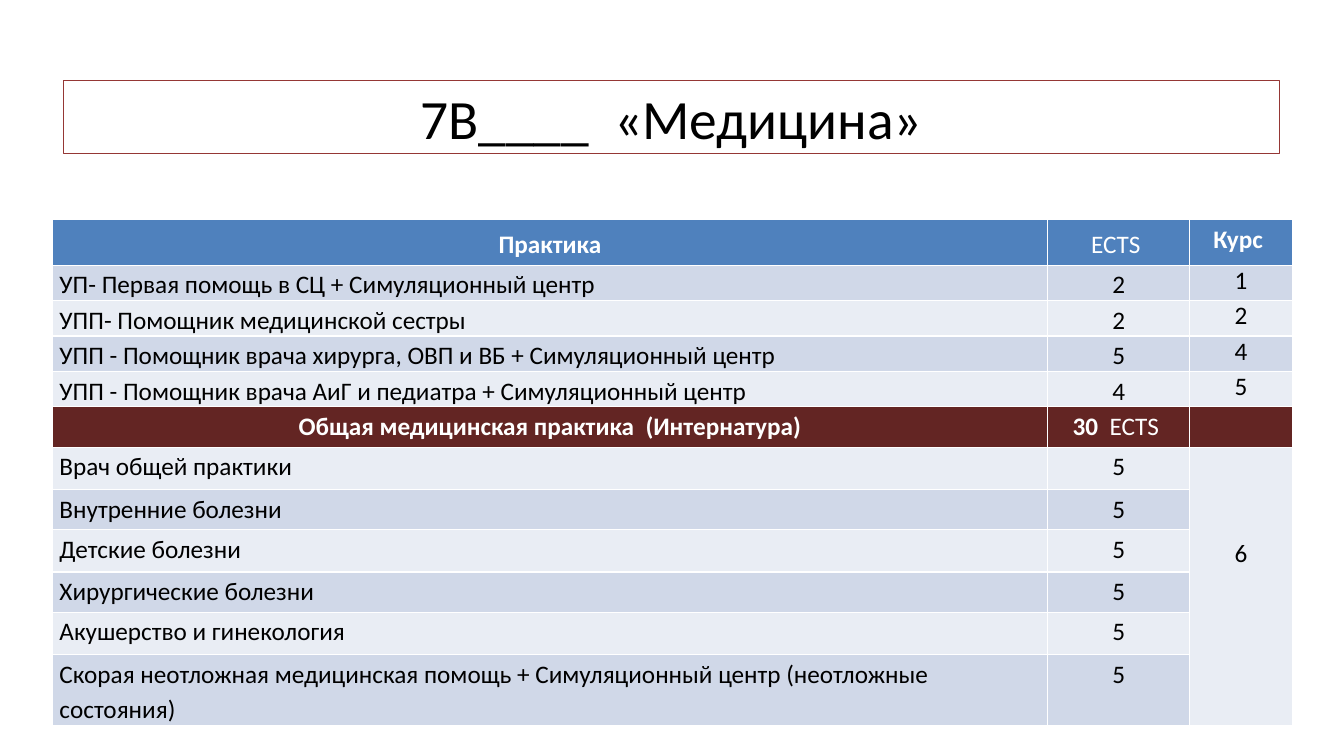
from dataclasses import dataclass
from typing import Optional

from pptx import Presentation
from pptx.dml.color import RGBColor
from pptx.enum.text import MSO_ANCHOR, PP_ALIGN
from pptx.table import Table, _Cell
from pptx.text.text import TextFrame
from pptx.util import Inches, Pt


@dataclass(frozen=True)
class Theme:
    font: str = "Calibri"
    title_size: float = 39.6
    table_size: float = 18
    black: RGBColor = RGBColor(0x00, 0x00, 0x00)
    white: RGBColor = RGBColor(0xFF, 0xFF, 0xFF)
    title_border: RGBColor = RGBColor(0x95, 0x37, 0x35)
    header: RGBColor = RGBColor(0x4F, 0x81, 0xBD)
    section: RGBColor = RGBColor(0x63, 0x25, 0x23)
    odd_row: RGBColor = RGBColor(0xD0, 0xD8, 0xE8)
    even_row: RGBColor = RGBColor(0xE9, 0xED, 0xF4)


@dataclass(frozen=True)
class Span:
    text: str
    bold: bool = False


@dataclass(frozen=True)
class Practice:
    name: Span
    credits: tuple[Span, ...]
    course: Optional[Span] = None
    height: float = 0.4
    band: Optional[RGBColor] = None


THEME = Theme()
HEADER_ROW = 0
INTERNSHIP_START = 6
INTERNSHIP_COURSE_DROP = 0.91
COLUMN_WIDTHS = (9.87, 1.41, 1.02)


def course_practice(name: str, credits: str, course: str) -> Practice:
    return Practice(Span(name), (Span(credits),), Span(course), height=0.34)


def internship(name: str, height: float, course: Optional[str] = None) -> Practice:
    return Practice(Span(name), (Span("5"),), Span(course) if course else None, height)


PRACTICES = (
    Practice(Span("Практика", True), (Span("ECTS "),), Span("Курс ", True), 0.42, THEME.header),
    course_practice("УП- Первая помощь в СЦ + Симуляционный центр", "2", "1"),
    course_practice("УПП- Помощник медицинской сестры", "2", "2"),
    course_practice("УПП - Помощник врача хирурга, ОВП и ВБ + Симуляционный центр", "5", "4"),
    course_practice("УПП - Помощник врача АиГ и педиатра + Симуляционный центр", "4", "5"),
    Practice(
        Span("Общая медицинская практика  (Интернатура)", True),
        (Span("30  ", True), Span("ECTS ")),
        band=THEME.section,
    ),
    internship("Врач общей практики", 0.42, "6"),
    internship("Внутренние болезни", 0.4),
    internship("Детские болезни", 0.42),
    internship("Хирургические болезни", 0.4),
    internship("Акушерство и гинекология", 0.42),
    internship(
        "Скорая неотложная медицинская помощь + Симуляционный центр (неотложные состояния)", 0.42
    ),
)


def write_text(
    frame: TextFrame,
    *spans: Span,
    size: float = THEME.table_size,
    color: RGBColor = THEME.black,
    align: PP_ALIGN = PP_ALIGN.CENTER,
    line_spacing: Optional[float] = None,
) -> None:
    paragraph = frame.paragraphs[0]
    paragraph.alignment = align
    paragraph.line_spacing = line_spacing
    for span in spans:
        run = paragraph.add_run()
        run.text = span.text
        run.font.name = THEME.font
        run.font.size = Pt(size)
        run.font.bold = span.bold
        run.font.color.rgb = color


def format_cell(cell: _Cell, fill: RGBColor, is_header: bool) -> None:
    cell.fill.solid()
    cell.fill.fore_color.rgb = fill
    if not is_header:
        cell.margin_left = cell.margin_right = Inches(0.07)
        cell.margin_top = cell.margin_bottom = 0


def fill_row(table: Table, index: int, practice: Practice) -> None:
    table.rows[index].height = Inches(practice.height)
    fill = practice.band or (THEME.odd_row if index % 2 else THEME.even_row)
    color = THEME.white if practice.band else THEME.black
    name, credits, course = table.rows[index].cells
    for cell in (name, credits, course):
        format_cell(cell, fill, index == HEADER_ROW)
    name_align = PP_ALIGN.CENTER if practice.band else PP_ALIGN.LEFT
    write_text(name.text_frame, practice.name, color=color, align=name_align, line_spacing=1.15)
    write_text(credits.text_frame, *practice.credits, color=color, line_spacing=1.15)
    if practice.course:
        write_text(course.text_frame, practice.course, color=color)


def main() -> None:
    presentation = Presentation()
    presentation.slide_width = Inches(13.33)
    presentation.slide_height = Inches(7.5)
    slide = presentation.slides.add_slide(presentation.slide_layouts[5])

    title = slide.shapes.title
    title.left, title.top = Inches(0.63), Inches(0.8)
    title.width, title.height = Inches(12.06), Inches(0.72)
    title.line.color.rgb = THEME.title_border
    title.line.width = Pt(0.75)
    title.text_frame.vertical_anchor = MSO_ANCHOR.MIDDLE
    write_text(title.text_frame, Span("7В____  «Медицина»"), size=THEME.title_size)

    table = slide.shapes.add_table(
        len(PRACTICES), len(COLUMN_WIDTHS),
        Inches(0.52), Inches(2.18), Inches(sum(COLUMN_WIDTHS)),
        Inches(sum(practice.height for practice in PRACTICES)),
    ).table
    for column, width in zip(table.columns, COLUMN_WIDTHS):
        column.width = Inches(width)
    for index, practice in enumerate(PRACTICES):
        fill_row(table, index, practice)

    internship_course = table.cell(INTERNSHIP_START, 2)
    internship_course.merge(table.cell(len(PRACTICES) - 1, 2))
    internship_course.margin_top = Inches(INTERNSHIP_COURSE_DROP)

    presentation.save("out.pptx")


if __name__ == "__main__":
    main()
